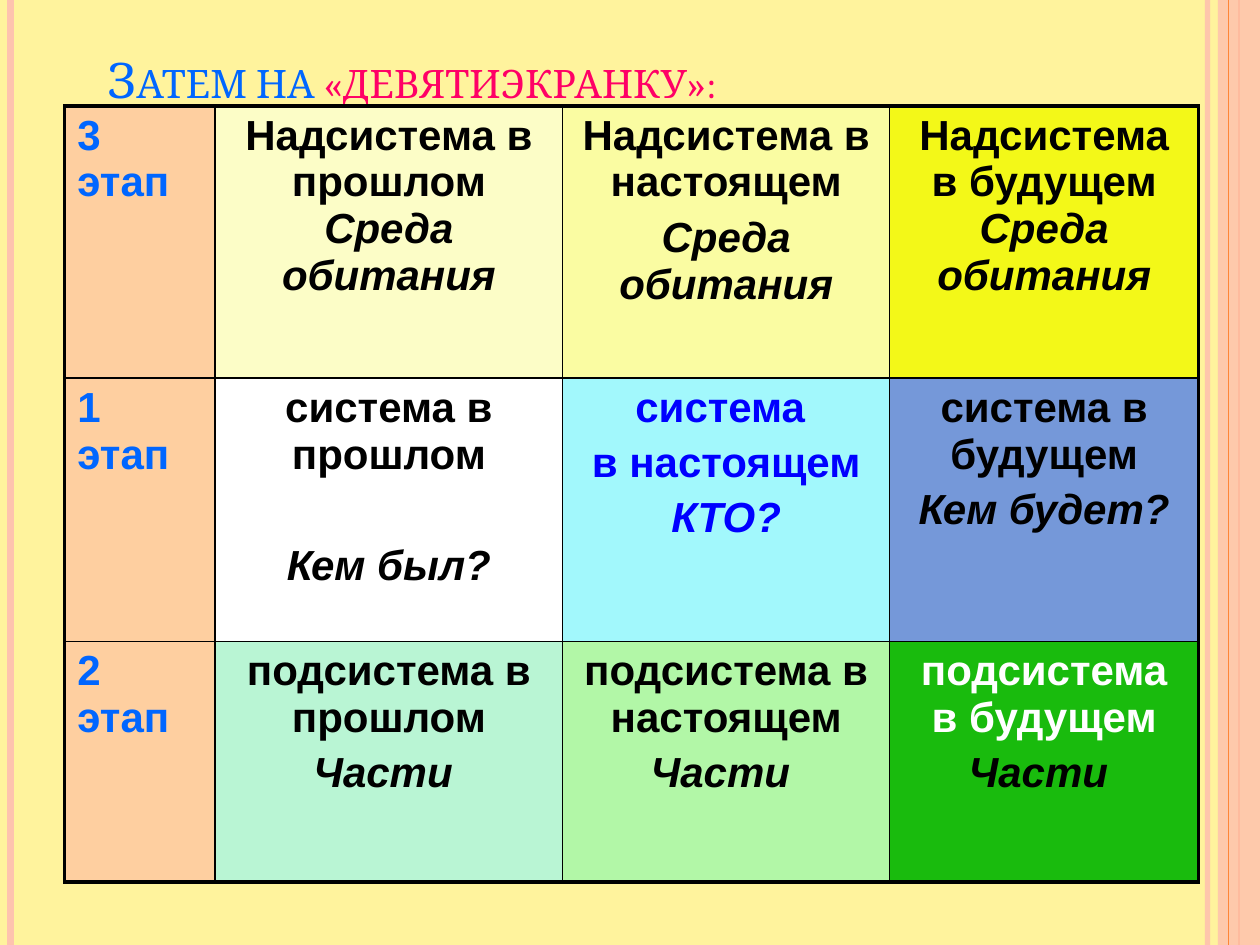
from lxml import etree
from pptx import Presentation as Deck
from pptx.dml.color import RGBColor as Rgb
from pptx.enum.shapes import MSO_CONNECTOR as Link, MSO_SHAPE as Form
from pptx.enum.text import MSO_ANCHOR as Anchor, PP_ALIGN as Align
from pptx.oxml.ns import qn
from pptx.util import Pt

HUES = {
    "back": "FFF39D", "peach": "FEC3AE", "orange": "FE8637", "black": "000000",
    "white": "FFFFFF", "blue": "0066FF", "deep": "0000FF", "pink": "FF0066",
    "stage": "FECFA0", "cream": "FCFDC7", "lemon": "FAFCA2", "yellow": "F3F818",
    "aqua": "A2F8FC", "steel": "7598D9", "mint": "B9F5D4", "lime": "B2F7A7",
    "green": "19BB0D",
}
WIDE, HIGH = 720, 540
GAP = 4.8
SKIP = 37.2


def hue(name):
    return Rgb.from_string(HUES[name])


def fade(part, rate):
    for tone in part.iter(qn("a:srgbClr")):
        etree.SubElement(tone, qn("a:alpha"), val=str(rate * 1000))


class Page:
    body = {"name": "Arial", "size": Pt(24), "bold": True}
    head = {"name": "Cambria", "size": Pt(28), "bold": False}
    thin, thick = 1, 2.25

    def __init__(self, deck):
        self.slide = deck.slides.add_slide(deck.slide_layouts[5])
        fill = self.slide.background.fill
        fill.solid()
        fill.fore_color.rgb = hue("back")

    def run(self, para, text, tint, style, **more):
        run = para.add_run()
        run.text = text
        for key, val in {**style, **more}.items():
            setattr(run.font, key, val)
        run.font.color.rgb = hue(tint)
        return run

    def line(self, x, tint, width, rate=None):
        line = self.slide.shapes.add_connector(
            Link.STRAIGHT, Pt(x), 0, Pt(x), Pt(HIGH))
        line.line.color.rgb = hue(tint)
        line.line.width = Pt(width)
        etree.SubElement(line._element.spPr, qn("a:effectLst"))
        if rate:
            fade(line._element, rate)

    def band(self, x, width, tint, rate):
        band = self.slide.shapes.add_shape(
            Form.RECTANGLE, Pt(x), 0, Pt(width), Pt(HIGH))
        band.shadow.inherit = False
        band.fill.solid()
        band.fill.fore_color.rgb = hue(tint)
        band.line.fill.background()
        fade(band._element.spPr, rate)

    def title(self, box, parts):
        title = self.slide.shapes.title
        for key, val in zip(("left", "top", "width", "height"), box):
            setattr(title, key, Pt(val))
        title.text_frame.vertical_anchor = Anchor.BOTTOM
        para = title.text_frame.paragraphs[0]
        para.alignment = Align.LEFT
        for text, tint in parts:
            run = self.run(para, text, tint, self.head)
            run._r.get_or_add_rPr().set("cap", "small")

    def edge(self, cell, sides):
        props = cell._tc.get_or_add_tcPr()
        for spot, (side, outer) in enumerate(sides.items()):
            width = self.thick if outer else self.thin
            line = etree.Element(qn("a:ln" + side), w=str(Pt(width)))
            fill = etree.SubElement(line, qn("a:solidFill"))
            etree.SubElement(fill, qn("a:srgbClr"), val=HUES["black"])
            props.insert(spot, line)

    def cell(self, cell, back, paras, align):
        cell.fill.solid()
        cell.fill.fore_color.rgb = hue(back)
        frame = cell.text_frame
        for spot, (gap, runs) in enumerate(paras):
            para = frame.add_paragraph() if spot else frame.paragraphs[0]
            para.alignment = align
            para.space_before = Pt(gap)
            for text, tint, slant in runs:
                self.run(para, text, tint, self.body, italic=slant)

    def table(self, x, y, cols, rows, data):
        grid = self.slide.shapes.add_table(
            len(rows), len(cols), Pt(x), Pt(y), Pt(sum(cols)), Pt(sum(rows))).table
        grid.first_row = grid.horz_banding = False
        for col, width in zip(grid.columns, cols):
            col.width = Pt(width)
        for row, height in zip(grid.rows, rows):
            row.height = Pt(height)
        for r, line in enumerate(data):
            for c, (back, paras) in enumerate(line):
                cell = grid.cell(r, c)
                self.cell(cell, back, paras, Align.CENTER if c else Align.LEFT)
                self.edge(cell, {"L": c == 0, "R": c == len(cols) - 1,
                                 "T": r == 0, "B": r == len(rows) - 1})


def plain(text, tint="black"):
    return text, tint, False


def slant(text, tint="black"):
    return text, tint, True


def stage(num):
    return "stage", [(GAP, [plain(f"{num} этап", "blue")])]


def stack(back, *runs, gap=GAP):
    return back, [(gap if spot else GAP, [run]) for spot, run in enumerate(runs)]


def flow(back, *runs):
    return back, [(GAP, runs)]


HOME = slant("Среда обитания")
PARTS = slant("Части ")
DATA = [
    [stage(3),
     flow("cream", plain("Надсистема в прошлом "), HOME),
     stack("lemon", plain("Надсистема в настоящем"), HOME),
     flow("yellow", plain("Надсистема в будущем "), HOME)],
    [stage(1),
     stack("white", plain("система в прошлом"), slant("Кем был?"), gap=SKIP),
     stack("aqua", plain("система ", "deep"), plain("в настоящем", "deep"),
           slant("КТО?", "deep")),
     stack("steel", plain("система в будущем"), slant("Кем будет?"))],
    [stage(2),
     stack("mint", plain("подсистема в прошлом"), PARTS),
     stack("lime", plain("подсистема в настоящем"), PARTS),
     stack("green", plain("подсистема в будущем", "white"), PARTS)],
]


def main():
    deck = Deck()
    deck.slide_width, deck.slide_height = Pt(WIDE), Pt(HIGH)
    page = Page(deck)
    page.line(690, "peach", 3, 93)
    page.line(6, "peach", 4.5)
    page.line(708, "orange", 1.5)
    page.band(696, 24, "peach", 87)
    page.line(702, "orange", 0.75)
    page.title((54, 24, 612, 41.5),
               [("Затем на ", "blue"), ("«девятиэкранку»:", "pink")])
    page.table(37, 60.5, (86, 198.5, 187, 176.5), (155.5, 150.5, 137.5), DATA)
    deck.save("out.pptx")


if __name__ == "__main__":
    main()
